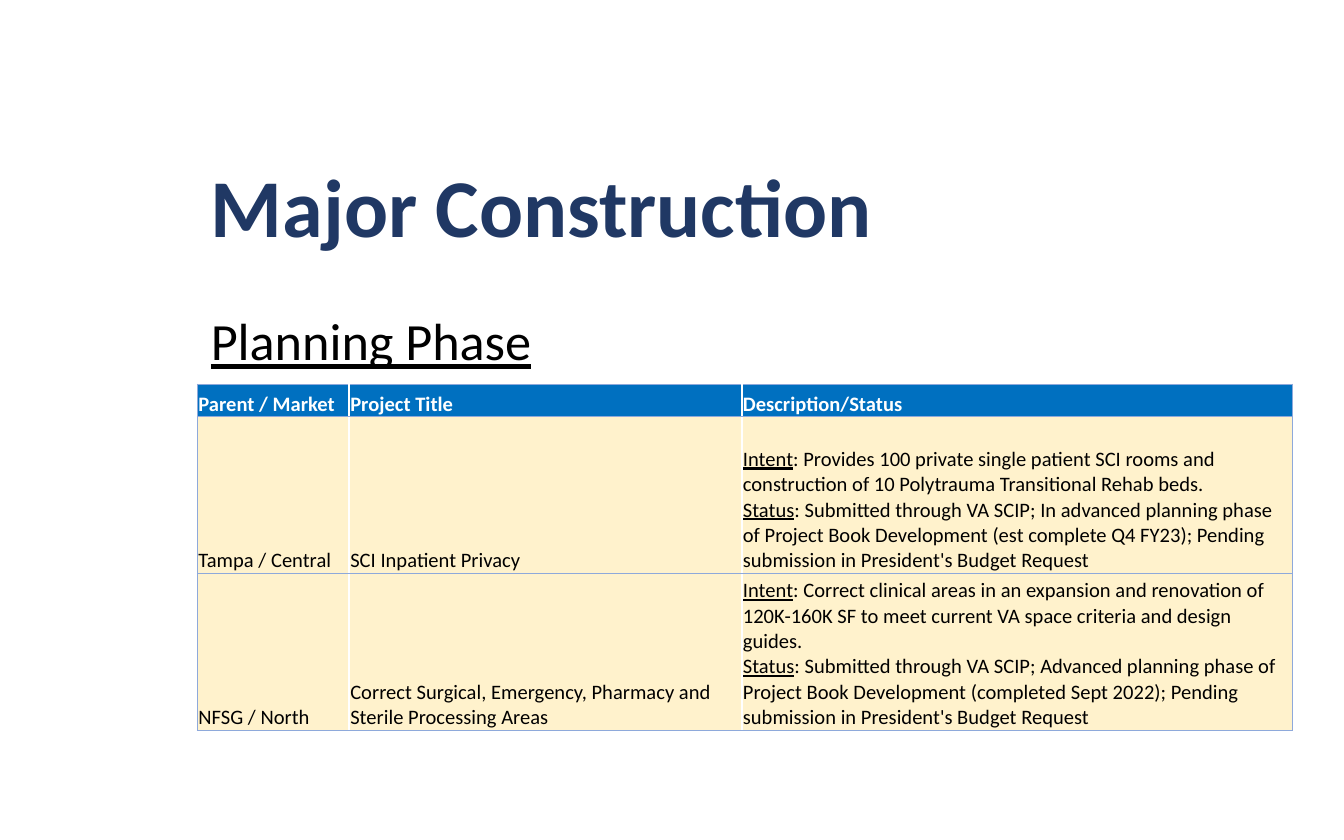
from lxml import etree
from pptx import Presentation
from pptx import util as u
from pptx.dml.color import RGBColor
from pptx.enum import text
from pptx.oxml import ns

NAVY = RGBColor(0x20, 0x38, 0x64)
BLUE = RGBColor(0x00, 0x70, 0xC0)
CREAM = RGBColor(0xFF, 0xF2, 0xCC)
RULE = RGBColor(0x8E, 0xA9, 0xDB)
BLACK = RGBColor(0, 0, 0)
WHITE = RGBColor(0xFF, 0xFF, 0xFF)
FONT = "Calibri"

TITLE = "Major Construction"
PHASE = "Planning Phase"
HEADER = ["Parent / Market", "Project Title", "Description/Status"]
PROJECTS = [
    ("Tampa / Central", "SCI Inpatient Privacy", {
        "Intent": "Provides 100 private single patient SCI rooms and construction "
                  "of 10 Polytrauma Transitional Rehab beds.",
        "Status": "Submitted through VA SCIP; In advanced planning phase of Project "
                  "Book Development (est complete Q4 FY23); Pending submission in "
                  "President's Budget Request"}),
    ("NFSG / North", "Correct Surgical, Emergency, Pharmacy and Sterile Processing Areas", {
        "Intent": "Correct clinical areas in an expansion and renovation of 120K-160K "
                  "SF to meet current VA space criteria and design guides.",
        "Status": "Submitted through VA SCIP; Advanced planning phase of Project Book "
                  "Development (completed Sept 2022); Pending submission in "
                  "President's Budget Request"}),
]
COL_WIDTHS = [2.87, 7.42, 10.41]
ROW_HEIGHTS = [0.62, 2.96, 2.96]
LEFT = 3.73


def add_run(p, words, size, color, bold=False, underline=False):
    r = p.add_run()
    r.text = words
    f = r.font
    f.name, f.size, f.bold, f.underline = FONT, u.Pt(size), bold, underline
    f.color.rgb = color


def place(sp, top, height):
    sp.left, sp.top = u.Cm(LEFT), u.Cm(top)
    sp.width, sp.height = u.Cm(19.94), u.Cm(height)
    p = sp.text_frame.paragraphs[0]
    p.alignment = text.PP_ALIGN.LEFT
    p.line_spacing = 0.9
    p.space_before = u.Pt(0)
    return p


def add_border(cell, side):
    tcPr = cell._tc.get_or_add_tcPr()
    ln = etree.SubElement(tcPr, ns.qn(f"a:ln{side}"), w=str(u.Pt(0.5)))
    fill = etree.SubElement(ln, ns.qn("a:solidFill"))
    etree.SubElement(fill, ns.qn("a:srgbClr"), val=str(RULE))


def fill_cell(cell, content, sides, header):
    for side in sides:
        add_border(cell, side)
    cell.fill.solid()
    cell.fill.fore_color.rgb = BLUE if header else CREAM
    cell.vertical_anchor = text.MSO_ANCHOR.BOTTOM
    cell.margin_left = cell.margin_right = cell.margin_top = u.Cm(0.02)
    cell.margin_bottom = 0
    p = cell.text_frame.paragraphs[0]
    if isinstance(content, str):
        add_run(p, content, 11, WHITE if header else BLACK, bold=header)
        return
    for i, (label, words) in enumerate(content.items()):
        if i:
            p.add_line_break()
        add_run(p, label, 11, BLACK, underline=True)
        add_run(p, f": {words}", 11, BLACK)


prs = Presentation()
prs.slide_width, prs.slide_height = u.Cm(25.4), u.Cm(15.88)
s = prs.slides.add_slide(prs.slide_layouts[1])

title, body = s.placeholders
p = place(title, 2.46, 3.07)
title.text_frame.vertical_anchor = text.MSO_ANCHOR.MIDDLE
add_run(p, TITLE, 44, NAVY, bold=True)

p = place(body, 5.84, 7.65)
pPr = p._p.get_or_add_pPr()
pPr.set("marL", "0")
pPr.set("indent", "0")
etree.SubElement(pPr, ns.qn("a:buNone"))
add_run(p, PHASE, 28, BLACK, underline=True)

rows = [HEADER, *PROJECTS]
table = s.shapes.add_table(
    len(rows), len(HEADER), u.Cm(LEFT), u.Cm(7.26),
    u.Cm(sum(COL_WIDTHS)), u.Cm(sum(ROW_HEIGHTS))).table
for col, width in zip(table.columns, COL_WIDTHS):
    col.width = u.Cm(width)
for row, height in zip(table.rows, ROW_HEIGHTS):
    row.height = u.Cm(height)
for i, row in enumerate(rows):
    for j, content in enumerate(row):
        sides = ("LTB", "TB", "RTB")[j]
        fill_cell(table.cell(i, j), content, sides, header=i == 0)

prs.save("out.pptx")
